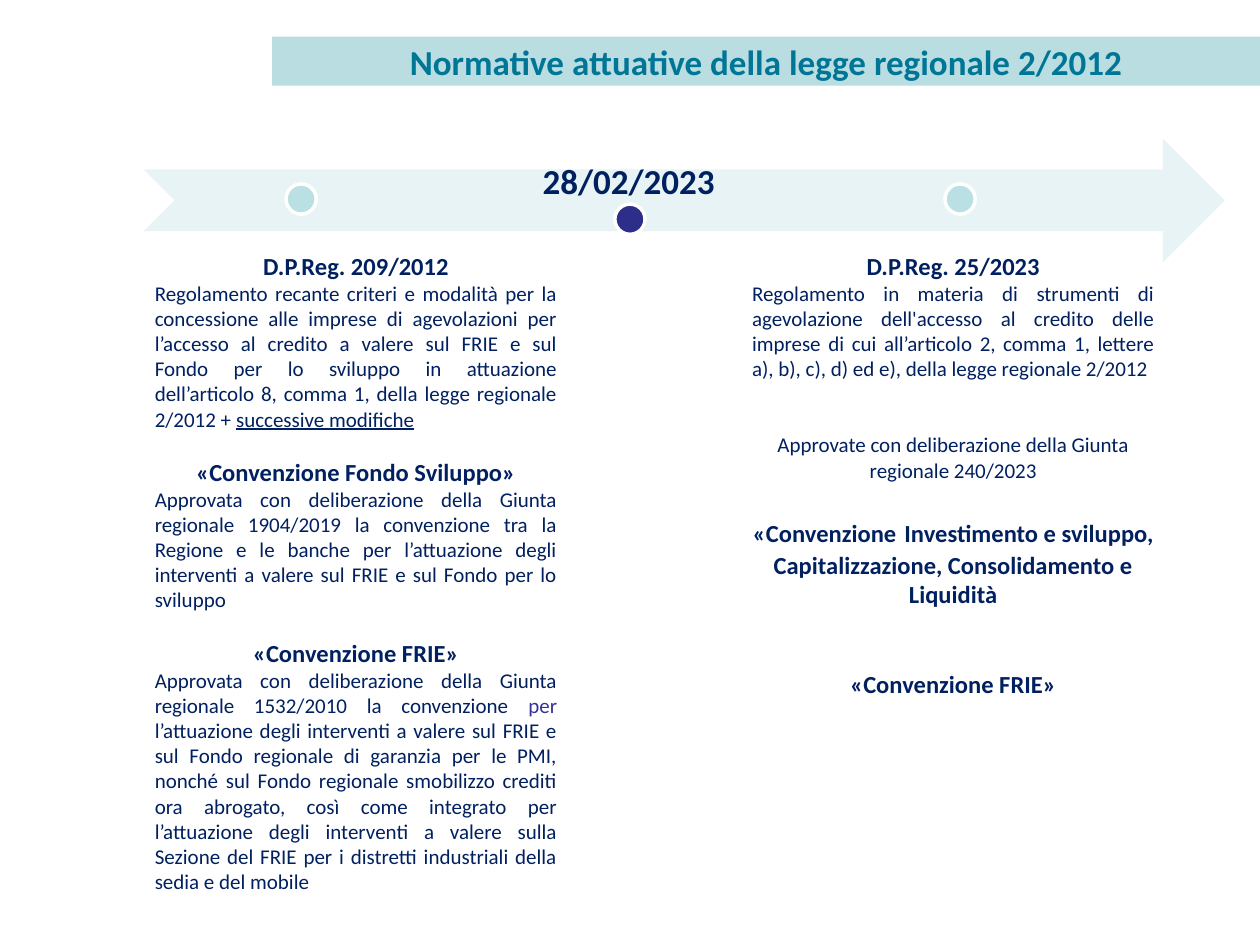
"""Build the timeline slide on the rules implementing regional law 2/2012."""
from dataclasses import dataclass
from typing import Any

import pptx
import pptx.dml.color
import pptx.enum.shapes
import pptx.enum.text
import pptx.util

Inches = pptx.util.Inches
Pt = pptx.util.Pt
SHAPE = pptx.enum.shapes.MSO_SHAPE
ALIGN = pptx.enum.text.PP_ALIGN

COLORS = {
    "band": "BADDE1",
    "title": "007697",
    "arrow": "E7F3F4",
    "dot": "BBE0E3",
    "current": "2D2D8A",
    "white": "FFFFFF",
    "text": "002060",
    "accent": "333399",
}
DATE = {"size": Pt(20), "bold": True}
HEADING = {"size": Pt(14), "bold": True}
BODY = {"size": Pt(12), "bold": False}
LINK = {**BODY, "underline": True}
WIDE = {"size": Pt(20), "bold": False}


@dataclass
class Span:
    text: str
    style: dict[str, Any]
    color: str = "text"


@dataclass
class Para:
    spans: list[Span]
    align: Any = ALIGN.CENTER
    before: float = 0


@dataclass
class Dot:
    left: float
    top: float
    color: str


@dataclass
class Column:
    left: float
    height: float
    paras: list[Para]


def rgb(name: str) -> pptx.dml.color.RGBColor:
    return pptx.dml.color.RGBColor.from_string(COLORS[name])


def set_attrs(obj: Any, values: dict[str, Any]) -> None:
    for name, value in values.items():
        setattr(obj, name, value)


def box(left: float, top: float, width: float, height: float) -> dict[str, int]:
    return dict(zip(("left", "top", "width", "height"), map(Inches, (left, top, width, height))))


def heading(text: str, before: float = 0) -> Para:
    return Para([Span(text, HEADING)], before=before)


def body(*spans: Span) -> Para:
    return Para(list(spans), ALIGN.JUSTIFY)


def write(tf: Any, paras: list[Para]) -> None:
    for i, para in enumerate(paras):
        p = tf.add_paragraph() if i else tf.paragraphs[0]
        p.alignment = para.align
        if para.before:
            p.space_before = Pt(para.before)
        for span in para.spans:
            r = p.add_run()
            r.text = span.text
            set_attrs(r.font, {"name": "Calibri", **span.style})
            r.font.color.rgb = rgb(span.color)


def add_filled(s: Any, kind: Any, place: dict[str, int], color: str) -> Any:
    sp = s.shapes.add_shape(kind, **place)
    sp.shadow.inherit = False
    sp.fill.solid()
    sp.fill.fore_color.rgb = rgb(color)
    sp.line.fill.background()
    return sp


def add_dot(s: Any, dot: Dot) -> None:
    sp = add_filled(s, SHAPE.OVAL, box(dot.left, dot.top, 0.24, 0.24), dot.color)
    sp.line.color.rgb = rgb("white")
    sp.line.width = Pt(2)


def add_text(s: Any, place: dict[str, int], paras: list[Para]) -> Any:
    tf = s.shapes.add_textbox(**place).text_frame
    tf.word_wrap = True
    write(tf, paras)
    return tf


def add_title(s: Any, text: str) -> None:
    sp = s.shapes.title
    set_attrs(sp, box(2.16, 0.29, 7.84, 0.39))
    sp.fill.solid()
    sp.fill.fore_color.rgb = rgb("band")
    set_attrs(sp.text_frame, {
        "word_wrap": True,
        "auto_size": pptx.enum.text.MSO_AUTO_SIZE.NONE,
        "vertical_anchor": pptx.enum.text.MSO_ANCHOR.MIDDLE,
    })
    write(sp.text_frame, [Para([Span(text, DATE, "title")])])


DOTS = [Dot(2.27, 1.46, "dot"), Dot(4.88, 1.62, "current"), Dot(7.5, 1.46, "dot")]

COLUMNS = [
    Column(1.13, 5.37, [
        heading("D.P.Reg. 209/2012"),
        body(
            Span("Regolamento recante criteri e modalità per la concessione alle imprese di "
                 "agevolazioni per l’accesso al credito a valere sul FRIE e sul Fondo per lo "
                 "sviluppo in attuazione dell’articolo 8, comma 1, della legge regionale "
                 "2/2012 + ", BODY),
            Span("successive modifiche", LINK),
        ),
        heading("«Convenzione Fondo Sviluppo»", 14.6),
        body(Span("Approvata con deliberazione della Giunta regionale 1904/2019 la convenzione "
                  "tra la Regione e le banche per l’attuazione degli interventi a valere sul "
                  "FRIE e sul Fondo per lo sviluppo", BODY)),
        heading("«Convenzione FRIE»", 14.6),
        body(
            Span("Approvata con deliberazione della Giunta regionale 1532/2010 la convenzione",
                 BODY),
            Span(" per ", BODY, "accent"),
            Span("l’attuazione degli interventi a valere sul FRIE e sul Fondo regionale di "
                 "garanzia per le PMI, nonché sul Fondo regionale smobilizzo crediti ora "
                 "abrogato, così come integrato per l’attuazione degli interventi a valere "
                 "sulla Sezione del FRIE per i distretti industriali della sedia e del mobile",
                 BODY),
        ),
    ]),
    Column(5.87, 3.82, [
        heading("D.P.Reg. 25/2023"),
        body(Span("Regolamento in materia di strumenti di agevolazione dell'accesso al credito "
                  "delle imprese di cui all’articolo 2, comma 1, lettere a), b), c), d) ed e), "
                  "della legge regionale 2/2012", BODY)),
        Para([Span("Approvate con deliberazione della Giunta regionale 240/2023", BODY)],
             before=29.2),
        Para([
            Span("«Convenzione", HEADING),
            Span(" ", WIDE, "accent"),
            Span("Investimento e sviluppo, Capitalizzazione, Consolidamento e Liquidità",
                 HEADING),
        ], before=14.6),
        heading("«Convenzione FRIE»", 34.2),
    ]),
]


def main() -> None:
    prs = pptx.Presentation()
    set_attrs(prs, {"slide_width": Inches(10), "slide_height": Inches(7.5)})
    s = prs.slides.add_slide(prs.slide_layouts[5])
    add_title(s, "Normative attuative della legge regionale 2/2012")
    add_filled(s, SHAPE.NOTCHED_RIGHT_ARROW, box(1.14, 1.1, 8.58, 0.98), "arrow")
    tf = add_text(s, box(3.9, 1.15, 2.18, 0.37), [Para([Span("28/02/2023", DATE)])])
    sides = ("left", "top", "right", "bottom")
    set_attrs(tf, {f"margin_{side}": Inches(0.16) for side in sides})
    tf.paragraphs[0].line_spacing = 0.9
    for dot in DOTS:
        add_dot(s, dot)
    for column in COLUMNS:
        add_text(s, box(column.left, 1.94, 3.39, column.height), column.paras)
    prs.save("out.pptx")


if __name__ == "__main__":
    main()
